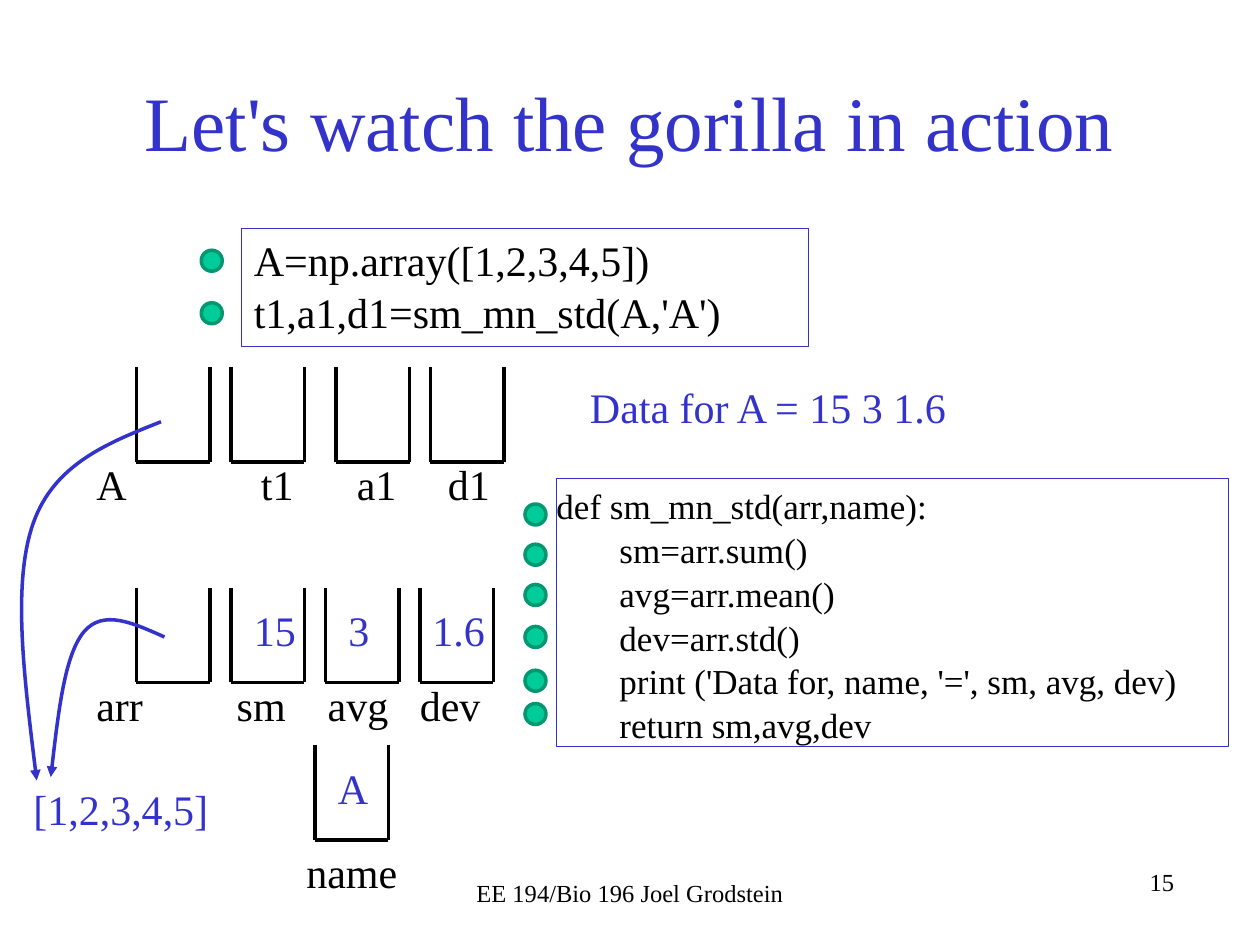
"""Build the slide that traces a function call through boxes of variables."""
from lxml import etree
from pptx import Presentation
from pptx.dml.color import RGBColor
from pptx.enum import shapes, text
from pptx.oxml import ns
from pptx.util import Pt

FONT, BLUE, BLACK, GREEN, DARK_GREEN = "Times New Roman", "3333CC", "000000", "00CC99", "009771"
LEFT, CENTER, RIGHT = text.PP_ALIGN.LEFT, text.PP_ALIGN.CENTER, text.PP_ALIGN.RIGHT

TITLE = "Let's watch the gorilla in action"
CALLER = ["A=np.array([1,2,3,4,5])", "t1,a1,d1=sm_mn_std(A,'A')"]
FUNCTION = [
    "def sm_mn_std(arr,name):",
    "sm=arr.sum()",
    "avg=arr.mean()",
    "dev=arr.std()",
    "print ('Data for, name, '=', sm, avg, dev)",
    "return sm,avg,dev",
]
BIN_WIDTH, BIN_HEIGHT = 42, 54
BIN_ROWS = [(210, [78, 132, 192, 246]), (336, [78, 132, 186, 240]), (426, [180])]
LABEL_ROWS = [
    (258.5, ["A", "t1", "a1", "d1"], [94, 148.8, 200.8]),
    (384.5, ["arr", "sm", "avg", "dev"], [80.2, 132.2, 184.8]),
]
NOTES = [
    ("15", 138, 342, 42, BLUE),
    ("3", 192, 342, 42, BLUE),
    ("1.6", 240, 342, 48, BLUE),
    ("A", 186, 432, 42, BLUE),
    ("[1,2,3,4,5]", 12, 444, 120, BLUE),
    ("Data for A = 15 3 1.6", 330, 214.5, 300, BLUE),
    ("name", 168, 480, 78, BLACK),
]
DOT_SIZE = 12
DOT_COLUMNS = [(115, [143, 173]), (300, [288, 311, 334, 358, 383, 402])]
POINTERS = [
    [(92, 241), (62, 253), (31, 265), (19, 299), (7, 333), (14, 389), (21, 446)],
    [(94, 364), (76, 356), (59, 348), (48, 361), (37, 374), (33, 410), (29, 444)],
]


def color(hex_code):
    return RGBColor.from_string(hex_code)


def format_text(frame, size, hex_code, align=LEFT):
    for paragraph in frame.paragraphs:
        paragraph.alignment = align
        for run in paragraph.runs:
            run.font.name, run.font.size = FONT, Pt(size)
            run.font.color.rgb = color(hex_code)


def add_text(slide, words, left, top, width, height=36, size=24, hex_code=BLACK, align=LEFT):
    box = slide.shapes.add_textbox(Pt(left), Pt(top), Pt(width), Pt(height))
    box.text_frame.word_wrap = True
    box.text_frame.text = words
    format_text(box.text_frame, size, hex_code, align)
    return box


def add_code(slide, lines, left, top, width, height, size):
    box = add_text(slide, "\n".join(lines), left, top, width, height, size)
    box.line.color.rgb, box.line.width = color(BLUE), Pt(0.75)
    for paragraph in box.text_frame.paragraphs:
        paragraph.space_before = Pt(1)
    return box


def add_labels(slide, top, names, stops):
    box = add_text(slide, "\t".join(names), 48, top, 264)
    properties = box.text_frame.paragraphs[0]._p.get_or_add_pPr()
    tabs = etree.SubElement(properties, ns.qn("a:tabLst"))
    for stop in stops:
        etree.SubElement(tabs, ns.qn("a:tab"), pos=str(Pt(stop)), algn="l")


def add_bin(slide, left, top):
    right, bottom = left + BIN_WIDTH, top + BIN_HEIGHT
    for ends in [(left, top, left, bottom), (right, top, right, bottom), (left, bottom, right, bottom)]:
        side = slide.shapes.add_connector(shapes.MSO_CONNECTOR.STRAIGHT, *map(Pt, ends))
        side.line.color.rgb, side.line.width = color(BLACK), Pt(2.25)
        etree.SubElement(side._element.spPr, ns.qn("a:effectLst"))


def add_dot(slide, left, top):
    dot = slide.shapes.add_shape(
        shapes.MSO_SHAPE.OVAL, Pt(left), Pt(top), Pt(DOT_SIZE), Pt(DOT_SIZE))
    dot.shadow.inherit = False
    dot.fill.solid()
    dot.fill.fore_color.rgb = color(GREEN)
    dot.line.color.rgb, dot.line.width = color(DARK_GREEN), Pt(2)


def add_pointer(slide, points):
    start, *controls = [(Pt(x), Pt(y)) for x, y in points]
    builder = slide.shapes.build_freeform(*start)
    builder.add_line_segments(controls, close=False)
    pointer = builder.convert_to_shape()
    pointer.shadow.inherit = False
    pointer.fill.background()
    pointer.line.color.rgb, pointer.line.width = color(BLUE), Pt(2)
    etree.SubElement(pointer.line._get_or_add_ln(), ns.qn("a:tailEnd"), type="triangle")
    segments = list(pointer._element.iter(ns.qn("a:lnTo")))
    outline = segments[0].getparent()
    for first in range(0, len(segments), 3):
        curve = etree.SubElement(outline, ns.qn("a:cubicBezTo"))
        for segment in segments[first:first + 3]:
            curve.append(segment[0])
            outline.remove(segment)


def main():
    deck = Presentation()
    deck.slide_width, deck.slide_height = Pt(720), Pt(540)
    slide = deck.slides.add_slide(deck.slide_layouts[5])

    title = slide.shapes.title
    title.left, title.top, title.width, title.height = Pt(54), Pt(24), Pt(612), Pt(90)
    title.text_frame.text = TITLE
    title.text_frame.vertical_anchor = text.MSO_ANCHOR.MIDDLE
    format_text(title.text_frame, 44, BLUE, CENTER)

    add_text(slide, "15", 450, 492, 228, size=14, align=RIGHT)
    add_text(slide, "EE 194/Bio 196 Joel Grodstein", 246, 498, 228, size=14, align=CENTER)
    add_code(slide, CALLER, 138, 130.5, 324, 67.5, 24)
    function = add_code(slide, FUNCTION, 318, 273.5, 384, 153, 20).text_frame
    function.margin_left = function.margin_right = 0
    for paragraph in function.paragraphs[1:]:
        paragraph.level = 1
        paragraph._p.get_or_add_pPr().set("marL", str(Pt(36)))

    for top, lefts in BIN_ROWS:
        for left in lefts:
            add_bin(slide, left, top)
    for row in LABEL_ROWS:
        add_labels(slide, *row)
    for words, left, top, width, hex_code in NOTES:
        add_text(slide, words, left, top, width, hex_code=hex_code)
    for left, tops in DOT_COLUMNS:
        for top in tops:
            add_dot(slide, left, top)
    for points in POINTERS:
        add_pointer(slide, points)

    deck.save("out.pptx")


if __name__ == "__main__":
    main()
